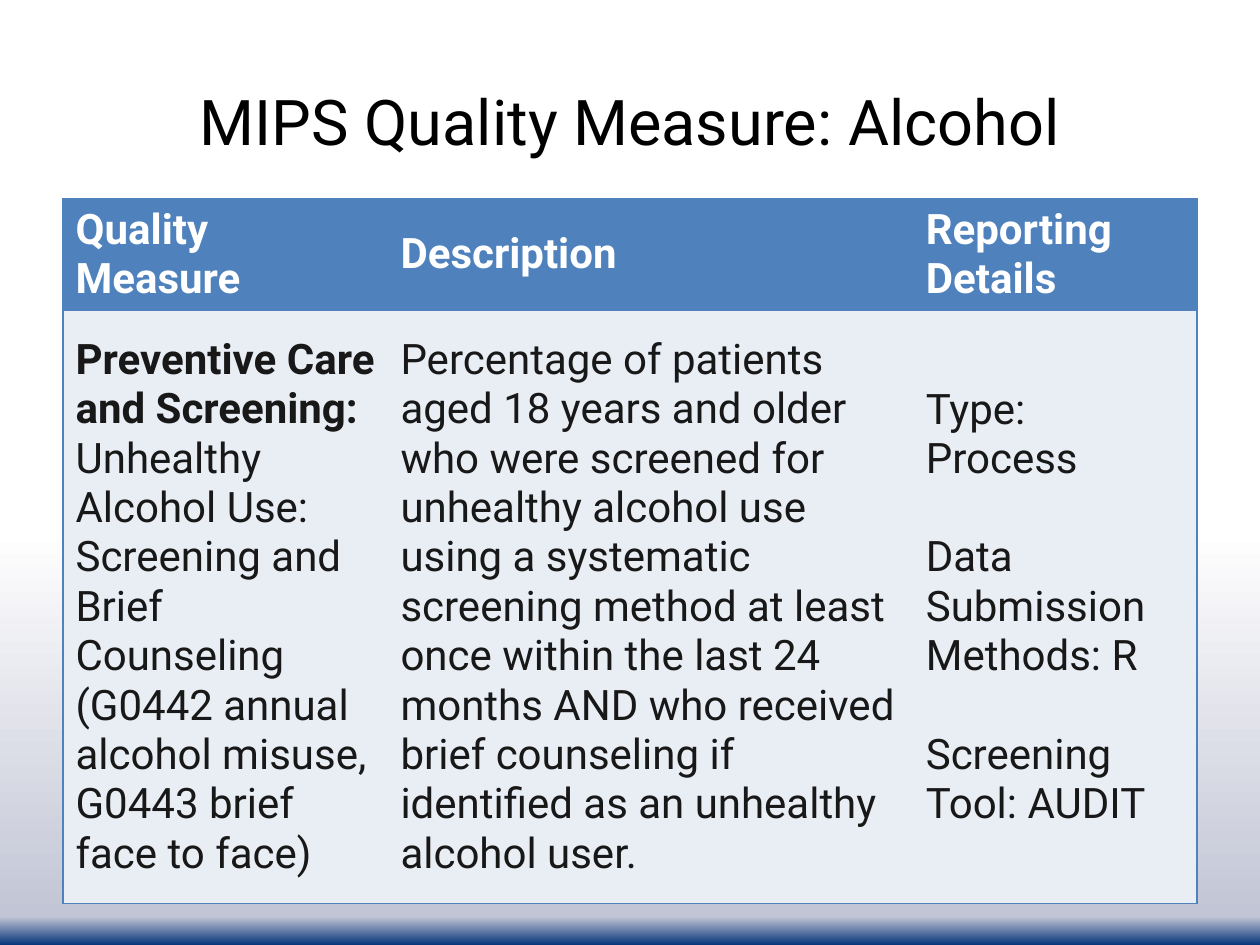
from dataclasses import dataclass

from lxml import etree
from pptx import Presentation
from pptx.dml.color import RGBColor
from pptx.enum.text import MSO_ANCHOR, PP_ALIGN
from pptx.oxml.ns import qn
from pptx.util import Cm, Pt

MIDDLE = MSO_ANCHOR.MIDDLE
CENTER = PP_ALIGN.CENTER
FONT = "Roboto"
BLUE, PALE, DARK, WHITE, BLACK = "4F81BD", "E9EDF4", "181818", "FFFFFF", "000000"
LEFT, WIDTH = Cm(1.27), Cm(22.86)
COLUMN_WIDTHS = (Cm(6.55), Cm(10.59), Cm(5.72))
ROW_HEIGHTS = (Cm(2.24), Cm(11.96))


@dataclass(frozen=True)
class CellContent:
    paragraphs: tuple[str, ...]
    lead: str = ""


@dataclass(frozen=True)
class RowStyle:
    fill: str
    text: str
    bold: bool


@dataclass(frozen=True)
class GradientStop:
    percent: int
    color: str
    opacity: int = 100


HEADER_STYLE = RowStyle(BLUE, WHITE, True)
BODY_STYLE = RowStyle(PALE, DARK, False)
STOPS = (
    GradientStop(56, WHITE),
    GradientStop(97, "C2C5D5"),
    GradientStop(100, "06357A", 50),
)
ROWS = (
    (
        HEADER_STYLE,
        (
            CellContent(("Quality Measure",)),
            CellContent(("Description",)),
            CellContent(("Reporting Details",)),
        ),
    ),
    (
        BODY_STYLE,
        (
            CellContent(
                ("Unhealthy Alcohol Use: Screening and Brief Counseling "
                 "(G0442 annual alcohol misuse, G0443 brief face to face)",),
                lead="Preventive Care and Screening: ",
            ),
            CellContent(
                ("Percentage of patients aged 18 years and older who were screened "
                 "for unhealthy alcohol use using a systematic screening method at "
                 "least once within the last 24 months AND who received brief "
                 "counseling if identified as an unhealthy alcohol user.",),
            ),
            CellContent(
                ("Type: Process", "Data Submission Methods: R", "Screening Tool: AUDIT"),
            ),
        ),
    ),
)


def rgb(color: str) -> RGBColor:
    return RGBColor.from_string(color)


def format_font(font, size: int, color: str, bold: bool = False) -> None:
    font.name = FONT
    font.size = Pt(size)
    font.bold = bold
    font.color.rgb = rgb(color)


def set_background(slide) -> None:
    fill = slide.background.fill
    fill.gradient()
    gradient = slide.background._cSld.find(".//" + qn("a:gradFill"))
    for child in list(gradient):
        gradient.remove(child)
    stop_list = etree.SubElement(gradient, qn("a:gsLst"))
    for stop in STOPS:
        element = etree.SubElement(stop_list, qn("a:gs"), pos=str(stop.percent * 1000))
        color = etree.SubElement(element, qn("a:srgbClr"), val=stop.color)
        if stop.opacity < 100:
            etree.SubElement(color, qn("a:alpha"), val=str(stop.opacity * 1000))
    etree.SubElement(gradient, qn("a:lin"), ang="5400000", scaled="0")


def set_borders(cell, first_column: bool, last_column: bool) -> None:
    properties = cell._tc.get_or_add_tcPr()
    sides = (("L", first_column), ("R", last_column), ("T", True), ("B", True))
    for position, (side, visible) in enumerate(sides):
        line = etree.Element(qn(f"a:ln{side}"), w=str(Pt(1)))
        if visible:
            fill = etree.SubElement(line, qn("a:solidFill"))
            etree.SubElement(fill, qn("a:srgbClr"), val=BLUE)
        else:
            etree.SubElement(line, qn("a:noFill"))
        properties.insert(position, line)


def fill_cell(cell, content: CellContent, style: RowStyle) -> None:
    cell.vertical_anchor = MIDDLE
    cell.fill.solid()
    cell.fill.fore_color.rgb = rgb(style.fill)
    frame = cell.text_frame
    for index, text in enumerate(content.paragraphs):
        paragraph = frame.add_paragraph() if index else frame.paragraphs[0]
        if index:
            paragraph.space_before = Pt(28)
        elif content.lead:
            lead = paragraph.add_run()
            lead.text = content.lead
            format_font(lead.font, 24, style.text, True)
        run = paragraph.add_run()
        run.text = text
        format_font(run.font, 24, style.text, style.bold)


def add_title(slide, text: str) -> None:
    title = slide.shapes.title
    title.left, title.top, title.width, title.height = LEFT, Cm(1.47), WIDTH, Cm(1.9)
    title.text_frame.text = text
    title.text_frame.vertical_anchor = MIDDLE
    paragraph = title.text_frame.paragraphs[0]
    paragraph.alignment = CENTER
    format_font(paragraph.font, 36, BLACK)


def add_measure_table(slide) -> None:
    table = slide.shapes.add_table(
        len(ROWS), len(COLUMN_WIDTHS), LEFT, Cm(4.01), WIDTH, sum(ROW_HEIGHTS)
    ).table
    for column, width in zip(table.columns, COLUMN_WIDTHS):
        column.width = width
    for row, height, (style, contents) in zip(table.rows, ROW_HEIGHTS, ROWS):
        row.height = height
        for index, (cell, content) in enumerate(zip(row.cells, contents)):
            fill_cell(cell, content, style)
            set_borders(cell, index == 0, index == len(contents) - 1)


def main() -> None:
    presentation = Presentation()
    presentation.slide_width, presentation.slide_height = Cm(25.4), Cm(19.05)
    slide = presentation.slides.add_slide(presentation.slide_layouts[5])
    set_background(slide)
    add_title(slide, "MIPS Quality Measure: Alcohol")
    add_measure_table(slide)
    presentation.save("out.pptx")


if __name__ == "__main__":
    main()
